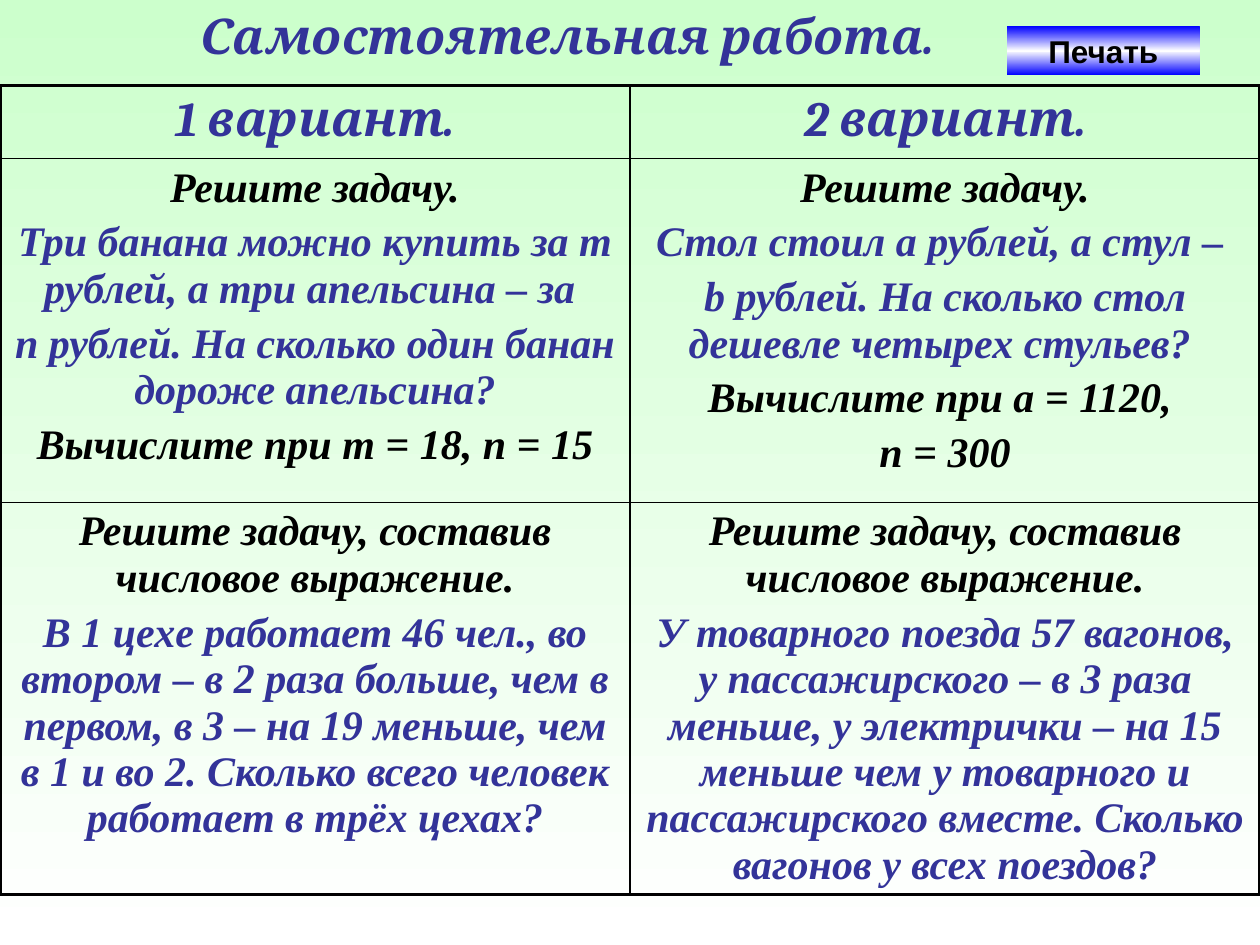
from copy import deepcopy

from lxml import etree
from pptx import Presentation
from pptx.dml.color import RGBColor
from pptx.enum import shapes, text
from pptx.oxml import ns
from pptx.util import Pt

COLORS = {"mint": "CCFFCC", "white": "FFFFFF", "blue": "0000FF",
          "indigo": "333399", "black": "000000"}
OUTER, INNER = 2.25, 1


def write(para, words, size, face, color, italic=True):
    para.text = words
    para.alignment = text.PP_ALIGN.CENTER
    font = para.font
    font.size, font.name, font.bold, font.italic = Pt(size), face, True, italic
    font.color.rgb = RGBColor.from_string(COLORS[color])


def add_border(cell, side, position, width):
    """Draw one side (L, R, T or B); position keeps the schema order."""
    line = etree.Element(ns.qn(f"a:ln{side}"), w=str(Pt(width)))
    solid = etree.SubElement(line, ns.qn("a:solidFill"))
    etree.SubElement(solid, ns.qn("a:srgbClr"), val=COLORS["black"])
    cell._tc.get_or_add_tcPr().insert(position, line)


deck = Presentation()
deck.slide_width, deck.slide_height = Pt(720), Pt(540)
page = deck.slides.add_slide(deck.slide_layouts[5])

backdrop = page.background.fill
backdrop.gradient()
backdrop.gradient_angle = 270
for stop, color in zip(backdrop.gradient_stops, ("mint", "white")):
    stop.color.rgb = RGBColor.from_string(COLORS[color])

title = page.shapes.title
title.left, title.top, title.width, title.height = Pt(0), Pt(-25.2), Pt(648), Pt(90)
title.text_frame.vertical_anchor = text.MSO_ANCHOR.MIDDLE
write(title.text_frame.paragraphs[0], "Самостоятельная работа.", 28, "Cambria", "indigo")

# Each cell lists its paragraphs as (words, colour).
expression = ("Решите задачу, составив числовое выражение.", "black")
problem = ("Решите задачу.", "black")
rows = [
    [[("1 вариант.", "indigo")], [("2 вариант.", "indigo")]],
    [
        [problem,
         ("Три банана можно купить за т рублей, а три апельсина – за ", "indigo"),
         ("п рублей. На сколько один банан дороже апельсина?", "indigo"),
         ("Вычислите при т = 18, п = 15", "black")],
        [problem,
         ("Стол стоил а рублей, а стул – ", "indigo"),
         ("b рублей. На сколько стол дешевле четырех стульев? ", "indigo"),
         ("Вычислите при a = 1120, ", "black"),
         ("п = 300", "black")],
    ],
    [
        [expression,
         ("В 1 цехе работает 46 чел., во втором – в 2 раза больше, чем в первом, "
          "в 3 – на 19 меньше, чем в 1 и во 2. Сколько всего человек работает "
          "в трёх цехах?", "indigo")],
        [expression,
         ("У товарного поезда 57 вагонов, у пассажирского – в 3 раза меньше, "
          "у электрички – на 15 меньше чем у товарного и пассажирского вместе. "
          "Сколько вагонов у всех поездов?", "indigo")],
    ],
]
heights = [41.5, 196.5, 224]

table = page.shapes.add_table(3, 2, Pt(0), Pt(49), Pt(720), Pt(sum(heights))).table
table.first_row = table.horz_banding = False
for r, (row, height) in enumerate(zip(rows, heights)):
    table.rows[r].height = Pt(height)
    for c, lines in enumerate(row):
        cell = table.cell(r, c)
        cell.fill.background()
        widths = {"L": OUTER if c == 0 else INNER,
                  "R": OUTER if c == 1 else INNER,
                  "T": OUTER if r == 0 else INNER,
                  "B": OUTER if r == 2 else INNER}
        for position, (side, width) in enumerate(widths.items()):
            add_border(cell, side, position, width)
        size, face = (28, "Cambria") if r == 0 else (24, "Times New Roman")
        frame = cell.text_frame
        for i, (words, color) in enumerate(lines):
            para = frame.add_paragraph() if i else frame.paragraphs[0]
            write(para, words, size, face, color)
            para.space_before = Pt(size * 0.2)

button = page.shapes.add_shape(shapes.MSO_SHAPE.ACTION_BUTTON_CUSTOM,
                               Pt(575.5), Pt(15), Pt(110), Pt(28))
button.shadow.inherit = False
button.line.fill.background()
button.fill.gradient()
button.fill.gradient_angle = 270
stops = button._element.spPr.find(".//" + ns.qn("a:gsLst"))
middle = deepcopy(stops[0])
middle.set("pos", "50000")
stops.insert(1, middle)
for stop, color in zip(button.fill.gradient_stops, ("blue", "white", "blue")):
    stop.color.rgb = RGBColor.from_string(COLORS[color])
button.text_frame.word_wrap = False
button.text_frame.vertical_anchor = text.MSO_ANCHOR.MIDDLE
write(button.text_frame.paragraphs[0], "Печать", 18, "Arial", "black", italic=False)

deck.save("out.pptx")
